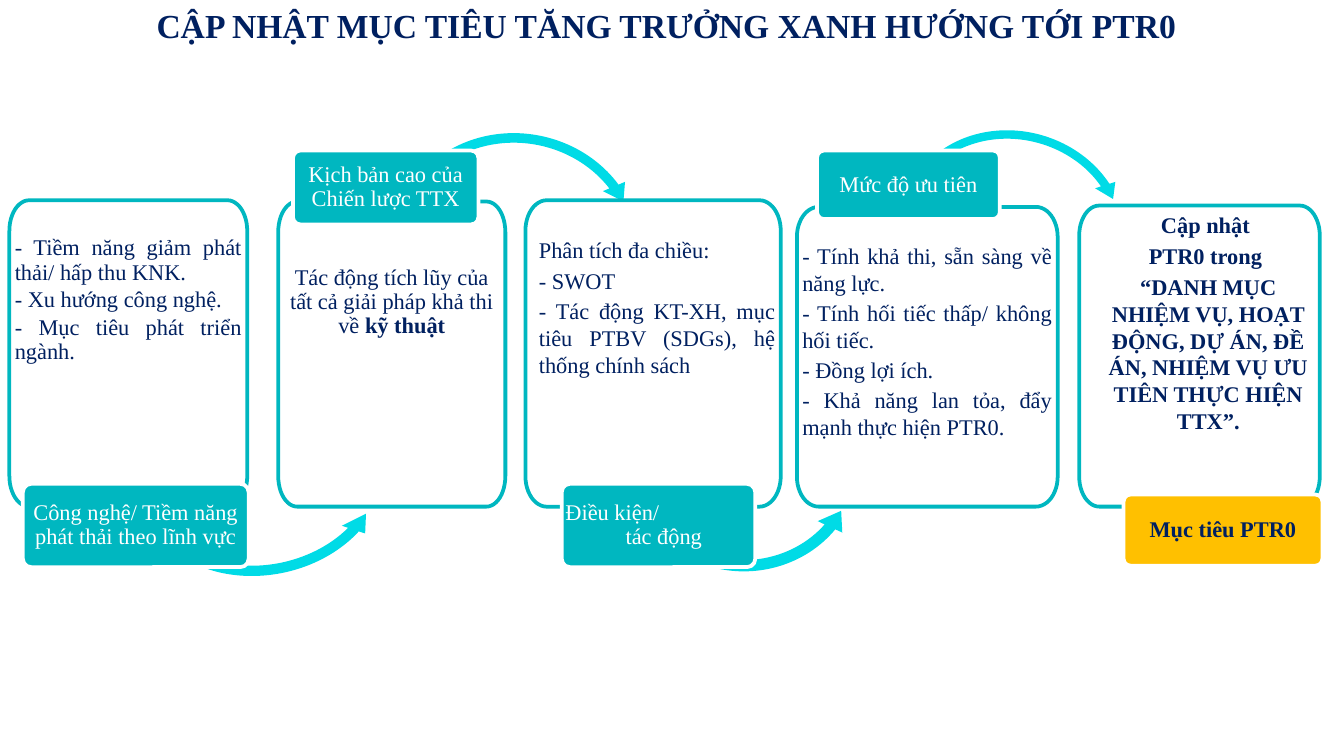
import math

import pptx
import pptx.dml.color
import pptx.enum.shapes
import pptx.enum.text
import pptx.oxml.ns
import pptx.oxml.xmlchemy
import pptx.util

Inches = pptx.util.Inches
Pt = pptx.util.Pt
RGBColor = pptx.dml.color.RGBColor
MSO_SHAPE = pptx.enum.shapes.MSO_SHAPE
PP_ALIGN = pptx.enum.text.PP_ALIGN
MSO_ANCHOR = pptx.enum.text.MSO_ANCHOR

NAVY = RGBColor(0x00, 0x20, 0x60)
TEAL = RGBColor(0x00, 0xB7, 0xC0)
CYAN = RGBColor(0x00, 0xDB, 0xE6)
AMBER = RGBColor(0xFF, 0xC0, 0x00)
WHITE = RGBColor(0xFF, 0xFF, 0xFF)
LEFT, CENTER, JUSTIFY = PP_ALIGN.LEFT, PP_ALIGN.CENTER, PP_ALIGN.JUSTIFY
FONT = "Times New Roman"


def set_text(tf, lines, insets, color, align, bold=False, spacing=1.0, after=0, indent=0):
    """Fill a text frame, one paragraph a line; insets are left, top, right, bottom."""
    tf.word_wrap = True
    tf.margin_left, tf.margin_top, tf.margin_right, tf.margin_bottom = map(Inches, insets)
    for i, line in enumerate(lines):
        p = tf.paragraphs[0] if i == 0 else tf.add_paragraph()
        p.text = line
        p.alignment = align
        p.line_spacing = spacing
        p.space_after = Pt(after)
        p.font.name = FONT
        p.font.size = Pt(12)
        p.font.bold = bold
        p.font.color.rgb = color
        if indent:
            p._p.get_or_add_pPr().set("marL", str(Inches(indent)))


def add_panel(shapes, left, top, width, bottom):
    """Add a box whose corners are quarter ellipses, higher than wide."""
    height = bottom - top
    rx, ry = width / 12, height / 10
    corners = [(left + width - rx, bottom - ry), (left + rx, bottom - ry),
               (left + rx, top + ry), (left + width - rx, top + ry)]
    points = []
    for quarter, (cx, cy) in enumerate(corners):
        for step in range(13):
            angle = math.radians(90 * quarter + 7.5 * step)
            points.append((Inches(cx + rx * math.cos(angle)), Inches(cy + ry * math.sin(angle))))
    builder = shapes.build_freeform(*points[0])
    builder.add_line_segments(points[1:], close=True)
    return builder.convert_to_shape()


prs = pptx.Presentation()
prs.slide_width, prs.slide_height = Inches(10), Inches(10 * 9 / 16)
s = prs.slides.add_slide(prs.slide_layouts[5])

title = s.shapes.title
title.left, title.top, title.width, title.height = map(Inches, (0, 0.02, 10, 0.32))
tf = title.text_frame
set_text(tf, ["CẬP NHẬT MỤC TIÊU TĂNG TRƯỞNG XANH HƯỚNG TỚI PTR0"],
         (0, 0, 0.08, 0), NAVY, CENTER, bold=True)
tf.paragraphs[0].font.size = Pt(18)
tf.vertical_anchor = MSO_ANCHOR.BOTTOM
tf.auto_size = pptx.enum.text.MSO_AUTO_SIZE.NONE

# Arrows between neighbouring steps, alternately below and above the panels
below = (MSO_SHAPE.LEFT_CIRCULAR_ARROW, (0.05, 6.39, 24.14, 90.25, 0.06))
above = (MSO_SHAPE.CIRCULAR_ARROW, (0.04, 5.3, 191.16, 123.92, 0.05))
arrows = [
    (below, (1, 2.81, 1.92, 1.52), 348.7),
    (above, (2.88, 0.94, 1.94, 1.78), 9.8),
    (below, (4.64, 2.63, 1.81, 1.68), 355.3),
    (above, (6.66, 0.93, 1.77, 1.57), 15),
]
for (kind, adjustments), box, rotation in arrows:
    sp = s.shapes.add_shape(kind, *map(Inches, box))
    for i, value in enumerate(adjustments):
        sp.adjustments[i] = value
    sp.rotation = rotation
    sp.shadow.inherit = False
    sp.fill.solid()
    sp.fill.fore_color.rgb = CYAN
    sp.line.fill.background()

# Panels: left, top, width, top inset, text, format
panels = [
    (0.07, 1.49, 1.77, 0.27,
     ["- Tiềm năng giảm phát thải/ hấp thu KNK.", "- Xu hướng công nghệ.",
      "- Mục tiêu phát triển ngành."],
     dict(align=JUSTIFY, spacing=0.9, after=1.8)),
    (2.07, 1.5, 1.69, 0.48,
     ["Tác động tích lũy của tất cả giải pháp khả thi về "],
     dict(align=CENTER, spacing=0.9, after=1.8)),
    (3.91, 1.49, 1.9, 0.27,
     ["Phân tích đa chiều: ", "- SWOT",
      "- Tác động KT-XH, mục tiêu PTBV (SDGs), hệ thống chính sách"],
     dict(align=JUSTIFY, after=1.8, indent=0.06)),
    (5.93, 1.54, 1.94, 0.26,
     ["- Tính khả thi, sẵn sàng về năng lực. ", "- Tính hối tiếc thấp/ không hối tiếc.",
      "- Đồng lợi ích.", "- Khả năng lan tỏa, đẩy mạnh thực hiện PTR0."],
     dict(align=JUSTIFY, after=1.8)),
    (8.03, 1.53, 1.79, 0.04,
     ["Cập nhật ", "PTR0 trong ",
      "“DANH MỤC NHIỆM VỤ, HOẠT ĐỘNG, DỰ ÁN, ĐỀ ÁN, NHIỆM VỤ ƯU TIÊN THỰC HIỆN TTX”."],
     dict(align=CENTER, bold=True, after=2.2, indent=0.13)),
]
panel_frames = []
for left, top, width, inset, lines, style in panels:
    sp = add_panel(s.shapes, left, top, width, 3.77)
    sp.shadow.inherit = False
    sp.fill.solid()
    sp.fill.fore_color.rgb = WHITE
    alpha = pptx.oxml.xmlchemy.OxmlElement("a:alpha")
    alpha.set("val", "90000")
    sp._element.spPr.find(".//" + pptx.oxml.ns.qn("a:srgbClr")).append(alpha)
    sp.line.color.rgb = TEAL
    sp.line.width = Pt(2)
    tf = sp.text_frame
    tf.vertical_anchor = MSO_ANCHOR.TOP
    set_text(tf, lines, (0.04, inset, 0.04, 0.04), NAVY, **style)
    panel_frames.append(tf)
r = panel_frames[1].paragraphs[0].add_run()
r.text = "kỹ thuật"
r.font.bold = True

# Labels: box, text, fill, font colour, bold
labels = [
    ((0.17, 3.6, 1.68, 0.62), ["Công nghệ/ Tiềm năng phát thải theo lĩnh vực"], TEAL, WHITE, False),
    ((2.18, 1.12, 1.38, 0.55), ["Kịch bản cao của Chiến lược TTX"], TEAL, WHITE, False),
    ((4.18, 3.6, 1.44, 0.62), ["Điều kiện/", "tác động"], TEAL, WHITE, False),
    ((6.08, 1.12, 1.36, 0.51), ["Mức độ ưu tiên"], TEAL, WHITE, False),
    ((8.36, 3.68, 1.48, 0.53), ["Mục tiêu PTR0"], AMBER, NAVY, True),
]
for box, lines, fill, color, bold in labels:
    sp = s.shapes.add_shape(MSO_SHAPE.ROUNDED_RECTANGLE, *map(Inches, box))
    sp.adjustments[0] = 0.1
    sp.shadow.inherit = False
    sp.fill.solid()
    sp.fill.fore_color.rgb = fill
    sp.line.color.rgb = WHITE
    sp.line.width = Pt(2)
    tf = sp.text_frame
    tf.vertical_anchor = MSO_ANCHOR.MIDDLE
    set_text(tf, lines, (0.01, 0, 0.01, 0), color, CENTER, bold=bold, spacing=0.9)
    if len(lines) == 2:
        tf.paragraphs[0].alignment = LEFT
        tf.paragraphs[1]._p.get_or_add_pPr().set("marL", str(Inches(0.08)))

prs.save("out.pptx")
